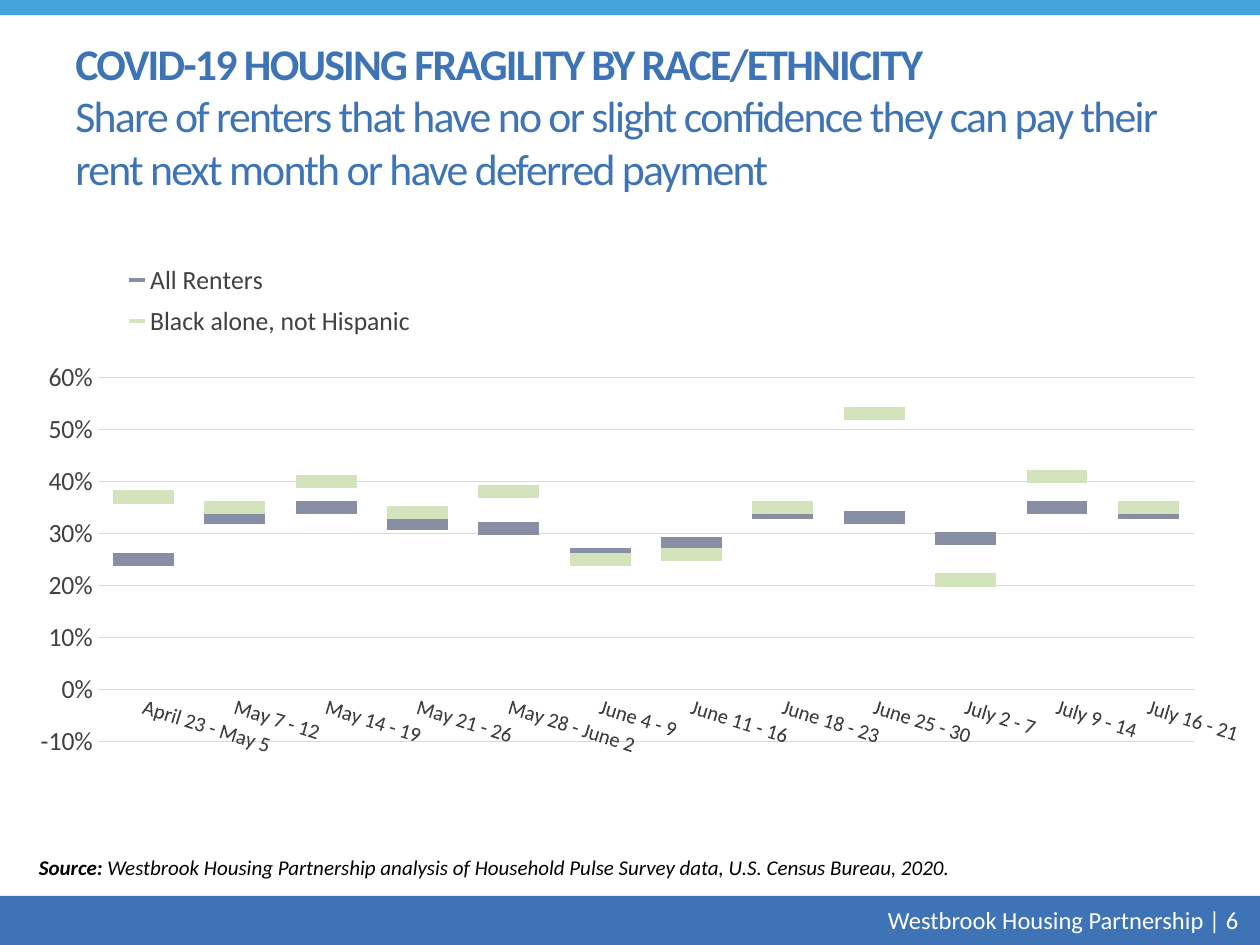
from dataclasses import dataclass

from lxml import etree
from pptx import Presentation
from pptx.chart.data import CategoryChartData
from pptx.dml.color import RGBColor
from pptx.enum import chart as charts, shapes, text
from pptx.oxml.ns import qn
from pptx.util import Inches, Pt


@dataclass(frozen=True)
class Theme:
    font: str = "Calibri"
    blue: str = "3E74B6"
    sky: str = "44A4DA"
    white: str = "FFFFFF"
    black: str = "000000"
    label: str = "404040"
    grid: str = "D9D9D9"
    title_size: float = 25
    chart_size: float = 15
    footer_size: float = 14
    small_size: float = 12


@dataclass(frozen=True)
class Box:
    left: float
    top: float
    width: float
    height: float

    def lengths(self) -> tuple:
        return tuple(Inches(v) for v in (self.left, self.top, self.width, self.height))


@dataclass(frozen=True)
class Run:
    text: str
    bold: bool = False


@dataclass(frozen=True)
class Series:
    name: str
    color: str
    values: tuple


THEME = Theme()
PERIODS = (
    "April 23 - May 5", "May 7 - 12", "May 14 - 19", "May 21 - 26",
    "May 28 - June 2", "June 4 - 9", "June 11 - 16", "June 18 - 23",
    "June 25 - 30", "July 2 - 7", "July 9 - 14", "July 16 - 21",
)
SERIES = (
    Series("All Renters", "888EA4",
           (0.25, 0.33, 0.35, 0.32, 0.31, 0.26, 0.28, 0.34, 0.33, 0.29, 0.35, 0.34)),
    Series("Black alone, not Hispanic", "D3E4BD",
           (0.37, 0.35, 0.40, 0.34, 0.38, 0.25, 0.26, 0.35, 0.53, 0.21, 0.41, 0.35)),
)


def style_font(font, size: float, color: str, bold: bool = False, italic: bool = False) -> None:
    font.name = THEME.font
    font.size = Pt(size)
    font.bold = bold
    font.italic = italic
    font.color.rgb = RGBColor.from_string(color)


def add_band(slide, box: Box, color: str) -> None:
    band = slide.shapes.add_shape(shapes.MSO_SHAPE.RECTANGLE, *box.lengths())
    band.shadow.inherit = False
    band.fill.solid()
    band.fill.fore_color.rgb = RGBColor.from_string(color)
    band.line.fill.background()


def add_text(slide, box: Box, runs: list[Run], size: float, color: str,
             align=text.PP_ALIGN.LEFT, anchor=text.MSO_ANCHOR.MIDDLE,
             italic: bool = False, spacing: float = 0) -> None:
    frame = slide.shapes.add_textbox(*box.lengths()).text_frame
    frame.word_wrap = True
    frame.vertical_anchor = anchor
    paragraph = frame.paragraphs[0]
    paragraph.alignment = align
    for index, part in enumerate(runs):
        if index and runs[index - 1].text.endswith("RACE/ETHNICITY"):
            paragraph.add_line_break()
        run = paragraph.add_run()
        run.text = part.text
        style_font(run.font, size, color, part.bold, italic)
        if spacing:
            run.font._element.set("spc", str(int(spacing * 100)))


def set_layout(parent, index: int, box: Box, inner: bool = False) -> None:
    """Place a chart part by fractions of the chart area."""
    for old in parent.findall(qn("c:layout")):
        parent.remove(old)
    layout = etree.Element(qn("c:layout"))
    manual = etree.SubElement(layout, qn("c:manualLayout"))
    settings = [("layoutTarget", "inner")] if inner else []
    settings += [("xMode", "edge"), ("yMode", "edge"), ("x", box.left),
                 ("y", box.top), ("w", box.width), ("h", box.height)]
    for tag, value in settings:
        etree.SubElement(manual, qn(f"c:{tag}")).set("val", str(value))
    parent.insert(index, layout)


def add_renter_chart(slide, box: Box) -> None:
    data = CategoryChartData(number_format="0%")
    data.categories = PERIODS
    for item in SERIES:
        data.add_series(item.name, item.values)
    chart = slide.shapes.add_chart(
        charts.XL_CHART_TYPE.LINE_MARKERS, *box.lengths(), data).chart
    chart.has_title = False
    style_font(chart.font, THEME.chart_size, THEME.label)

    # Dashes without connecting lines
    chart.plots[0].vary_by_categories = False
    for series, item in zip(chart.plots[0].series, SERIES):
        series.smooth = False
        series.format.line.fill.background()
        marker = series.marker
        marker.style = charts.XL_MARKER_STYLE.DASH
        marker.size = 35
        marker.format.fill.solid()
        marker.format.fill.fore_color.rgb = RGBColor.from_string(item.color)
        marker.format.line.fill.background()

    # Axes
    values, periods = chart.value_axis, chart.category_axis
    for axis, size in ((values, THEME.chart_size), (periods, THEME.small_size)):
        axis.major_tick_mark = axis.minor_tick_mark = charts.XL_TICK_MARK.NONE
        style_font(axis.tick_labels.font, size, THEME.label)
    values.minimum_scale, values.maximum_scale, values.major_unit = -0.1, 0.6, 0.1
    values.tick_labels.number_format = "0%"
    values.tick_labels.number_format_is_linked = False
    values.format.line.fill.background()
    for line in (values.major_gridlines.format.line, periods.format.line):
        line.color.rgb = RGBColor.from_string(THEME.grid)
        line.width = Pt(0.75)
    label_body = periods._element.find(qn("c:txPr")).find(qn("a:bodyPr"))
    label_body.set("rot", str(17 * 60000))
    label_body.set("vert", "horz")

    # Legend and plot positions
    chart.has_legend = True
    legend = chart.legend
    legend.position = charts.XL_LEGEND_POSITION.BOTTOM
    legend.include_in_layout = True
    style_font(legend.font, THEME.chart_size, THEME.label)
    set_layout(legend._element, 1, Box(0.08, 0.02, 0.26, 0.15))
    plot_area = chart._chartSpace.chart.plotArea
    set_layout(plot_area, 0, Box(0.066, 0.222, 0.918, 0.602), inner=True)


def main() -> None:
    presentation = Presentation()
    presentation.slide_width, presentation.slide_height = Inches(10), Inches(7.5)
    slide = presentation.slides.add_slide(presentation.slide_layouts[6])

    # Top and bottom bands with footer
    add_band(slide, Box(0, 7.11, 10, 0.4), THEME.blue)
    add_band(slide, Box(0, 0, 10, 0.12), THEME.sky)
    add_text(slide, Box(6.41, 7.12, 3.52, 0.36),
             [Run("Westbrook Housing Partnership | 6")],
             THEME.footer_size, THEME.white, align=text.PP_ALIGN.RIGHT)

    # Heading
    add_text(slide, Box(0.5, 0.58, 9.12, 0.67),
             [Run("COVID-19 HOUSING FRAGILITY BY RACE/ETHNICITY", bold=True),
              Run("Share of renters that have no or slight confidence they can pay "
                  "their rent next month or have deferred payment")],
             THEME.title_size, THEME.blue, spacing=-1)

    # Source note
    add_text(slide, Box(0.21, 6.73, 9.26, 0.3),
             [Run("Source: ", bold=True),
              Run("Westbrook Housing Partnership analysis of Household Pulse Survey "
                  "data, U.S. Census Bureau, 2020.")],
             THEME.small_size, THEME.black, anchor=text.MSO_ANCHOR.TOP, italic=True)

    add_renter_chart(slide, Box(0.15, 1.93, 9.7, 4.8))
    presentation.save("out.pptx")


if __name__ == "__main__":
    main()
